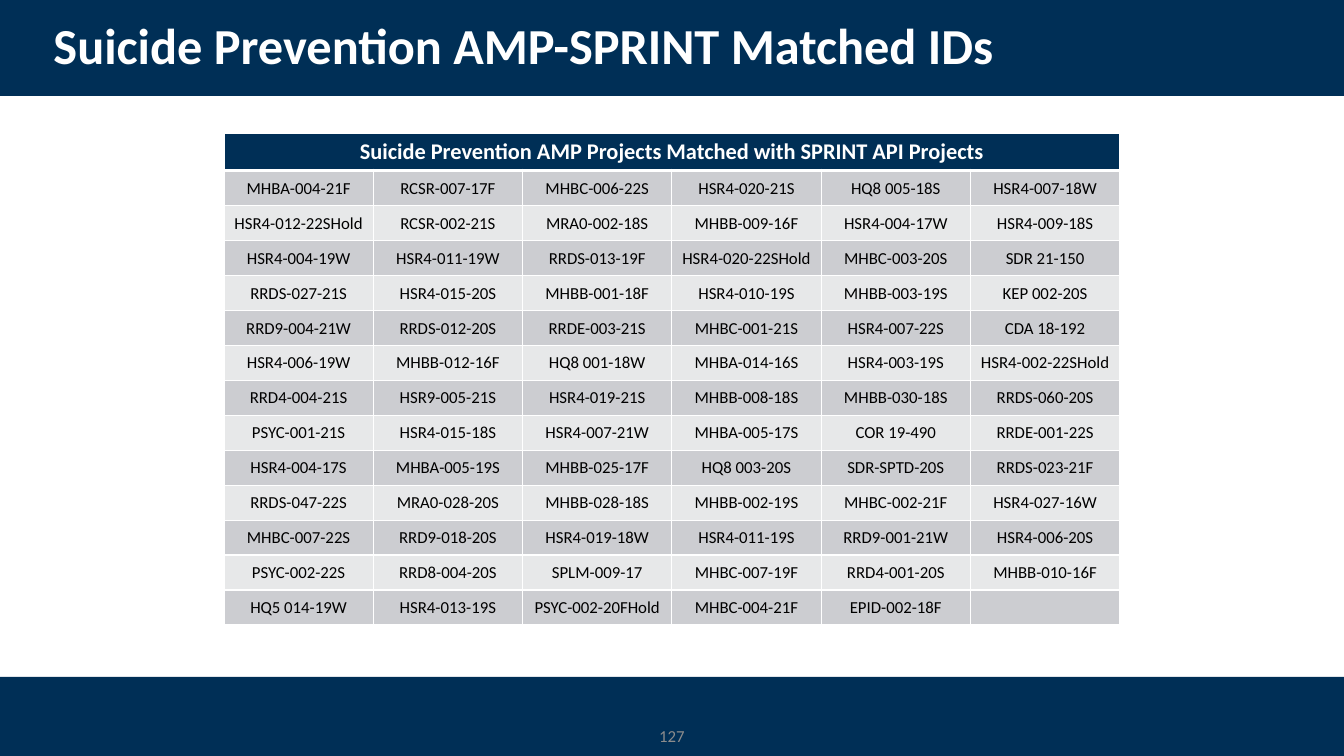
from lxml import etree
from pptx import Presentation
from pptx.dml.color import RGBColor
from pptx.enum.shapes import MSO_SHAPE
from pptx.enum.text import MSO_ANCHOR, MSO_AUTO_SIZE, PP_ALIGN
from pptx.oxml.ns import qn
from pptx.util import Pt

RECT = MSO_SHAPE.RECTANGLE
MIDDLE = MSO_ANCHOR.MIDDLE
FIXED = MSO_AUTO_SIZE.NONE
LEFT, CENTER = PP_ALIGN.LEFT, PP_ALIGN.CENTER

NAVY = RGBColor(0x00, 0x2F, 0x56)
WHITE = RGBColor(0xFF, 0xFF, 0xFF)
BLACK = RGBColor(0x00, 0x00, 0x00)
GRAY = RGBColor(0x8C, 0x8C, 0x8C)
DARK = RGBColor(0xCC, 0xCD, 0xD1)
LIGHT = RGBColor(0xE7, 0xE8, 0xE9)

TITLE = "Suicide Prevention AMP-SPRINT Matched IDs"
HEAD = "Suicide Prevention AMP Projects Matched with SPRINT API Projects"
IDS = [row.split(", ") for row in (
    "MHBA-004-21F, RCSR-007-17F, MHBC-006-22S, HSR4-020-21S, HQ8 005-18S, HSR4-007-18W",
    "HSR4-012-22SHold, RCSR-002-21S, MRA0-002-18S, MHBB-009-16F, HSR4-004-17W, HSR4-009-18S",
    "HSR4-004-19W, HSR4-011-19W, RRDS-013-19F, HSR4-020-22SHold, MHBC-003-20S, SDR 21-150",
    "RRDS-027-21S, HSR4-015-20S, MHBB-001-18F, HSR4-010-19S, MHBB-003-19S, KEP 002-20S",
    "RRD9-004-21W, RRDS-012-20S, RRDE-003-21S, MHBC-001-21S, HSR4-007-22S, CDA 18-192",
    "HSR4-006-19W, MHBB-012-16F, HQ8 001-18W, MHBA-014-16S, HSR4-003-19S, HSR4-002-22SHold",
    "RRD4-004-21S, HSR9-005-21S, HSR4-019-21S, MHBB-008-18S, MHBB-030-18S, RRDS-060-20S",
    "PSYC-001-21S, HSR4-015-18S, HSR4-007-21W, MHBA-005-17S, COR 19-490, RRDE-001-22S",
    "HSR4-004-17S, MHBA-005-19S, MHBB-025-17F, HQ8 003-20S, SDR-SPTD-20S, RRDS-023-21F",
    "RRDS-047-22S, MRA0-028-20S, MHBB-028-18S, MHBB-002-19S, MHBC-002-21F, HSR4-027-16W",
    "MHBC-007-22S, RRD9-018-20S, HSR4-019-18W, HSR4-011-19S, RRD9-001-21W, HSR4-006-20S",
    "PSYC-002-22S, RRD8-004-20S, SPLM-009-17, MHBC-007-19F, RRD4-001-20S, MHBB-010-16F",
    "HQ5 014-19W, HSR4-013-19S, PSYC-002-20FHold, MHBC-004-21F, EPID-002-18F",
)]


def write(frame, text, size=12, color=BLACK, bold=False, align=CENTER, font="Calibri"):
    para = frame.paragraphs[0]
    para.alignment = align
    run = para.add_run()
    run.text = text
    run.font.name = font
    run.font.size = Pt(size)
    run.font.bold = bold
    run.font.color.rgb = color
    return para


def edge(cell, side, width):
    line = etree.SubElement(cell._tc.get_or_add_tcPr(), qn(f"a:ln{side}"), w=str(Pt(width)))
    fill = etree.SubElement(line, qn("a:solidFill"))
    etree.SubElement(fill, qn("a:srgbClr"), val=str(WHITE))


class Deck:
    def __init__(self, wide, high):
        self.file = Presentation()
        self.file.slide_width, self.file.slide_height = Pt(wide), Pt(high)
        self.wide = wide
        self.slide = self.file.slides.add_slide(self.file.slide_layouts[5])
        self.shapes = self.slide.shapes

    def band(self, top, high):
        band = self.shapes.add_shape(RECT, 0, Pt(top), Pt(self.wide), Pt(high))
        band.shadow.inherit = False
        band.fill.solid()
        band.fill.fore_color.rgb = NAVY
        band.line.fill.background()
        # Bands lie behind the title
        self.shapes._spTree.insert(2, band._element)

    def title(self, text, left, top, wide, high):
        box = self.shapes.title
        box.left, box.top, box.width, box.height = Pt(left), Pt(top), Pt(wide), Pt(high)
        frame = box.text_frame
        frame.auto_size = FIXED
        frame.vertical_anchor = MIDDLE
        para = write(frame, text, size=36, color=WHITE, bold=True, align=LEFT)
        para.line_spacing = 0.9

    def label(self, text, left, top, wide, high, **style):
        frame = self.shapes.add_textbox(Pt(left), Pt(top), Pt(wide), Pt(high)).text_frame
        frame.word_wrap = True
        frame.vertical_anchor = MIDDLE
        write(frame, text, **style)

    def cell(self, cell, fill, top, bottom):
        for side, width in (("L", 1), ("R", 1), ("T", top), ("B", bottom)):
            edge(cell, side, width)
        cell.fill.solid()
        cell.fill.fore_color.rgb = fill
        cell.vertical_anchor = MIDDLE

    def table(self, head, rows, left, top, wide, step):
        cols = len(rows[0])
        count = len(rows) + 1
        grid = self.shapes.add_table(
            count, cols, Pt(left), Pt(top), Pt(wide), Pt(step * count)).table
        for row in grid.rows:
            row.height = Pt(step)

        # Header across all columns
        for col in range(cols):
            self.cell(grid.cell(0, col), NAVY, 1, 3)
        first = grid.cell(0, 0)
        first.merge(grid.cell(0, cols - 1))
        write(first.text_frame, head, size=16, color=WHITE, bold=True)

        # Striped body
        for r, row in enumerate(rows, 1):
            for c in range(cols):
                cell = grid.cell(r, c)
                cell.margin_left = cell.margin_right = cell.margin_top = Pt(0.72)
                cell.margin_bottom = 0
                self.cell(cell, DARK if r % 2 else LIGHT, 3 if r == 1 else 1, 1)
                if c < len(row):
                    write(cell.text_frame, row[c])


def main():
    deck = Deck(960, 540)
    # Bands and title
    deck.band(0, 68.5)
    deck.band(483.6, 56.4)
    deck.title(TITLE, 31, 8, 828, 53)
    # Project IDs
    deck.table(HEAD, IDS, 160, 95, 640, 25)
    # Page number
    deck.label("127", 372, 511.5, 216, 28.5, color=GRAY)
    deck.file.save("out.pptx")


if __name__ == "__main__":
    main()
